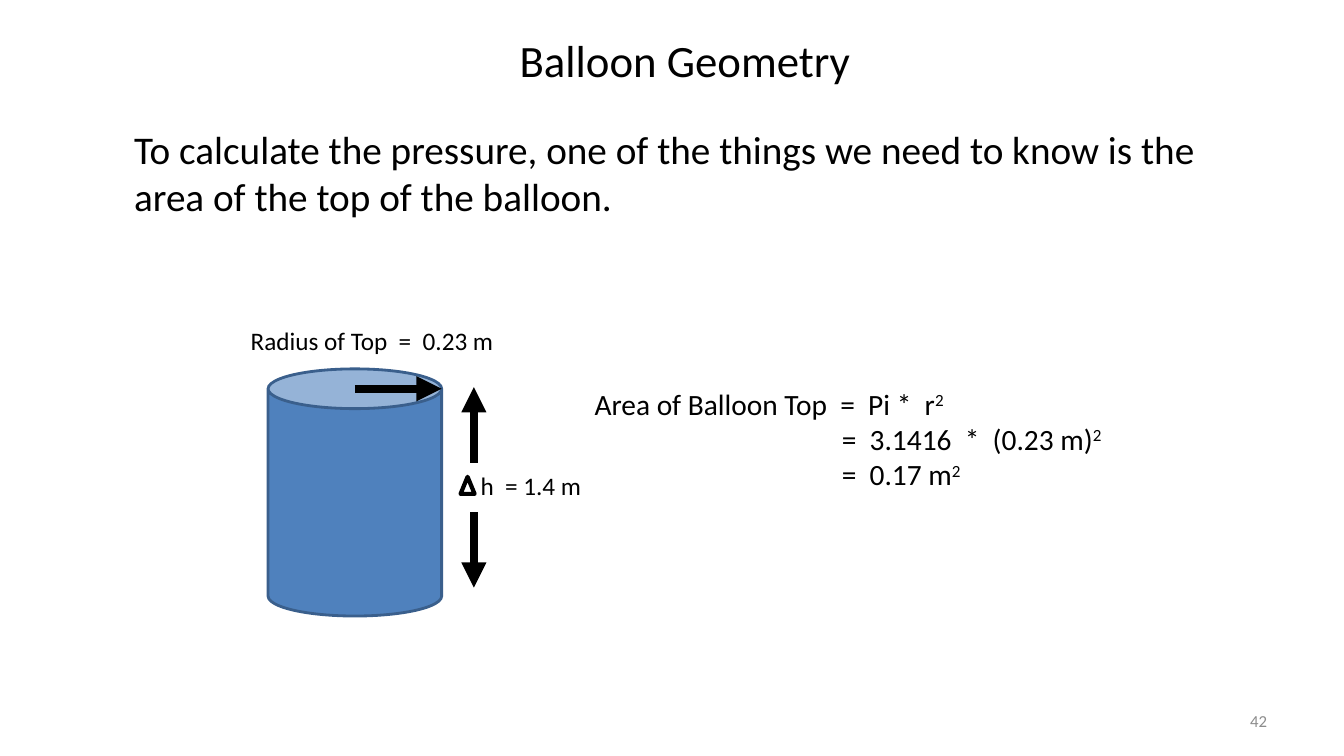
from lxml.etree import SubElement
from pptx import Presentation
from pptx.dml.color import RGBColor
from pptx.enum.shapes import MSO_CONNECTOR as Connector, MSO_SHAPE as Preset
from pptx.enum.text import MSO_ANCHOR as Anchor, MSO_AUTO_SIZE as AutoSize, PP_ALIGN as Align
from pptx.oxml.ns import qn
from pptx.util import Pt

BLACK = RGBColor(0x00, 0x00, 0x00)
GRAY = RGBColor(0x8C, 0x8C, 0x8C)
BLUE = RGBColor(0x4F, 0x81, 0xBD)
DARK_BLUE = RGBColor(0x3A, 0x5F, 0x8C)


def format_run(run, size, color=BLACK):
    run.font.name = "Calibri"
    run.font.size = Pt(size)
    run.font.color.rgb = color


def place(shape, left, top, width, height):
    shape.left, shape.top = Pt(left), Pt(top)
    shape.width, shape.height = Pt(width), Pt(height)


def fill_text(shape, text, size, color=BLACK, align=Align.LEFT, anchor=Anchor.TOP):
    frame = shape.text_frame
    frame.text = text
    frame.word_wrap = True
    frame.auto_size = AutoSize.NONE
    frame.vertical_anchor = anchor
    paragraph = frame.paragraphs[0]
    paragraph.alignment = align
    paragraph.space_before = Pt(0)
    format_run(paragraph.runs[0], size, color)


def add_label(shapes, box, text, size, **options):
    label = shapes.add_textbox(*map(Pt, box))
    fill_text(label, text, size, **options)


def add_arrow(shapes, start_x, start_y, end_x, end_y):
    arrow = shapes.add_connector(
        Connector.STRAIGHT, Pt(start_x), Pt(start_y), Pt(end_x), Pt(end_y))
    arrow.line.color.rgb = BLACK
    arrow.line.width = Pt(6)
    SubElement(arrow.line._get_or_add_ln(), qn("a:tailEnd"), type="triangle")
    SubElement(arrow._element.spPr, qn("a:effectLst"))


def add_heading(slide, left, top, width):
    title, body = slide.placeholders
    place(title, left + 196, top, 409.5, 46)
    fill_text(title, "Balloon Geometry", 32, align=Align.CENTER)
    place(body, left, top + 66.2, width, 75)
    fill_text(body, "To calculate the pressure, one of the things we need to know "
              "is the area of the top of the balloon.", 28)
    properties = body.text_frame.paragraphs[0]._p.get_or_add_pPr()
    properties.set("marL", "0")
    properties.set("indent", "0")
    SubElement(properties, qn("a:buNone"))


def add_height_label(slide, left, top):
    group = slide.shapes.add_group_shape()
    add_label(group.shapes, (left + 7.2, top, 99.4, 28.8), "h  = 1.4 m", 18)
    delta = group.shapes.add_shape(
        Preset.ISOSCELES_TRIANGLE, Pt(left), Pt(top + 8), Pt(10), Pt(12.2))
    delta.shadow.inherit = False
    delta.fill.background()
    delta.line.color.rgb = BLACK
    delta.line.width = Pt(3)


def add_balloon(slide, left, top, width, height):
    rim = 0.229
    can = slide.shapes.add_shape(Preset.CAN, Pt(left), Pt(top), Pt(width), Pt(height))
    can.adjustments[0] = rim
    can.shadow.inherit = False
    can.fill.solid()
    can.fill.fore_color.rgb = BLUE
    can.line.color.rgb = DARK_BLUE
    can.line.width = Pt(2)
    add_label(slide.shapes, (left - 19.5, top - 34.5, 224, 28.8),
              "Radius of Top  =  0.23 m", 18)
    rim_y = top + rim * width / 2
    add_arrow(slide.shapes, left + width / 2, rim_y, left + width, rim_y)
    height_x = left + width + 23
    for start, end in ((67, 13), (102.3, 156.3)):
        add_arrow(slide.shapes, height_x, top + start, height_x, top + end)
    add_height_label(slide, height_x - 9.5, top + 69.1)


def add_area_formula(slide, left, top, width, height):
    frame = slide.shapes.add_textbox(Pt(left), Pt(top), Pt(width), Pt(height)).text_frame
    frame.word_wrap = True
    lines = (("Area of Balloon Top  =  Pi *  r", 0),
             ("=  3.1416  *  (0.23 m)", 176.6),
             ("=  0.17 m", 176.6))
    for index, (text, indent) in enumerate(lines):
        paragraph = frame.add_paragraph() if index else frame.paragraphs[0]
        paragraph.text = text
        paragraph._p.get_or_add_pPr().set("marL", str(Pt(indent)))
        exponent = paragraph.add_run()
        exponent.text = "2"
        for run in paragraph.runs:
            format_run(run, 21)
        exponent.font._element.set("baseline", "30000")


def add_slide_number(slide, left, top, width, height):
    add_label(slide.shapes, (left, top, width, height), "42", 12,
              color=GRAY, align=Align.RIGHT, anchor=Anchor.MIDDLE)


def main():
    presentation = Presentation()
    presentation.slide_width, presentation.slide_height = Pt(960), Pt(540)
    slide = presentation.slides.add_slide(presentation.slide_layouts[1])
    add_heading(slide, 88.6, 19.5, 799)
    add_balloon(slide, 191.5, 263.5, 124, 176.5)
    add_area_formula(slide, 417.6, 272.2, 382.3, 83.5)
    add_slide_number(slide, 688.3, 500.4, 224, 28.8)
    presentation.save("out.pptx")


if __name__ == "__main__":
    main()
